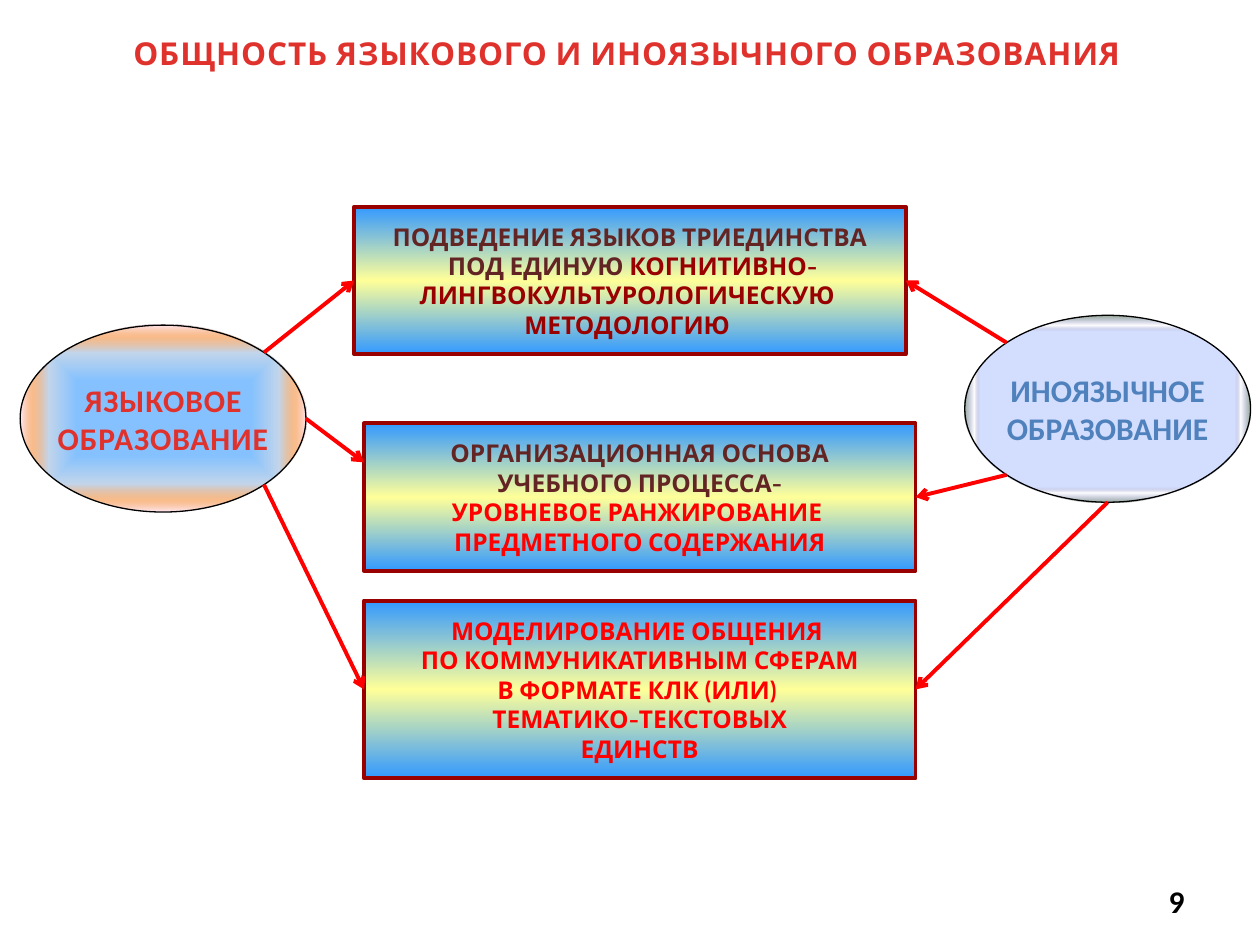
from math import cos, radians, sin

from lxml import etree
from pptx import Presentation
from pptx.dml.color import RGBColor
from pptx.enum import shapes, text
from pptx.oxml.ns import qn
from pptx.util import Pt

HUES = {"red": "FF0000", "wine": "990000", "brown": "632523", "blue": "4F81BD",
        "black": "000000"}
TITLE = [(25, "E0322D", 100), (100, "A2201C", 100)]
BAND = [(0, "3399FF", 100), (50, "FFFF99", 100), (100, "3399FF", 100)]
PEACH = [(40, "85C2FF", 100), (70, "C4D6EB", 100), (87, "F79646", 63), (100, "FFEBFA", 100)]
LILAC = [(53, "D4DEFF", 100), (83, "D4DEFF", 100), (89, "8488C4", 0), (100, "96AB94", 100)]
ALIGN = text.PP_ALIGN


def rgb(hue):
    return RGBColor.from_string(HUES[hue])


def sub(node, tag, **attrs):
    return etree.SubElement(node, qn(tag), {k: str(v) for k, v in attrs.items()})


class Slide:
    """Draws the parts of one slide in a shared style, with lengths in points."""

    def __init__(self, deck):
        self.page = deck.slides.add_slide(deck.slide_layouts[6])
        self.items = self.page.shapes

    def blend(self, fill, owner, stops, radial=False):
        fill.gradient()
        grad = next(owner.iter(qn("a:gradFill")))
        for child in list(grad):
            grad.remove(child)
        row = sub(grad, "a:gsLst")
        for pos, hue, alpha in stops:
            tone = sub(sub(row, "a:gs", pos=pos * 1000), "a:srgbClr", val=hue)
            if alpha < 100:
                sub(tone, "a:alpha", val=alpha * 1000)
        if radial:
            mid = dict.fromkeys("ltrb", 50000)
            sub(sub(grad, "a:path", path="shape"), "a:fillToRect", **mid)
        else:
            sub(grad, "a:lin", ang=5400000, scaled=0)

    def letter(self, shape, lines, size, font, align=ALIGN.CENTER, wrap=False, middle=True):
        frame = shape.text_frame
        frame.word_wrap = wrap
        anchor = text.MSO_ANCHOR
        frame.vertical_anchor = anchor.MIDDLE if middle else anchor.TOP
        for i, line in enumerate(lines):
            para = frame.add_paragraph() if i else frame.paragraphs[0]
            para.alignment = align
            for words, hue in line:
                run = para.add_run()
                run.text = words
                run.font.size, run.font.name, run.font.bold = Pt(size), font, True
                if hue == "title":
                    self.blend(run.font.fill, run._r, TITLE)
                    run._r.get_or_add_rPr().set("spc", "50")
                else:
                    run.font.color.rgb = rgb(hue)

    def label(self, box, words, hue, font, **style):
        shape = self.items.add_textbox(*map(Pt, box))
        self.letter(shape, [[(words, hue)]], 18, font, **style)

    def block(self, kind, box, stops, line, width, radial=False):
        shape = self.items.add_shape(kind, *map(Pt, box))
        shape.shadow.inherit = False
        self.blend(shape.fill, shape._element, stops, radial)
        shape.line.color.rgb = rgb(line)
        shape.line.width = Pt(width)
        return shape

    def oval(self, box, stops, words, hue):
        shape = self.block(shapes.MSO_SHAPE.OVAL, box, stops, "black", 0.75, True)
        self.letter(shape, [[(w, hue)] for w in words], 18, "Calibri")
        return shape

    def panel(self, box, lines):
        shape = self.block(shapes.MSO_SHAPE.RECTANGLE, box, BAND, "wine", 2.25)
        self.letter(shape, lines, 14, "Cabin")
        return shape

    def arrow(self, oval, angle, goal, side=None):
        turn = radians(angle)
        x = oval.left + oval.width / 2 * (1 + cos(turn))
        y = oval.top + oval.height / 2 * (1 + sin(turn))
        end = (0, 0) if side else map(Pt, goal)
        link = self.items.add_connector(shapes.MSO_CONNECTOR.STRAIGHT, int(x), int(y), *end)
        if side:
            link.end_connect(goal, side)
        link.line.color.rgb = rgb("red")
        link.line.width = Pt(2.25)
        trim = link._element.spPr
        sub(trim.find(qn("a:ln")), "a:tailEnd", type="arrow")
        sub(trim, "a:effectLst")


def main():
    deck = Presentation()
    deck.slide_width, deck.slide_height = Pt(720), Pt(540)
    slide = Slide(deck)
    slide.label((62, 16, 593, 29), "ОБЩНОСТЬ ЯЗЫКОВОГО И ИНОЯЗЫЧНОГО ОБРАЗОВАНИЯ",
                "title", "Cabin", middle=False)
    native = slide.oval((11.5, 185.8, 163.3, 106.8), PEACH,
                        ["ЯЗЫКОВОЕ", "ОБРАЗОВАНИЕ"], "title")
    other = slide.oval((551.3, 180.2, 163.3, 106.8), LILAC,
                       ["ИНОЯЗЫЧНОЕ", "ОБРАЗОВАНИЕ"], "blue")
    method = slide.panel((202.4, 118.2, 315.2, 84.2), [
        [("ПОДВЕДЕНИЕ ЯЗЫКОВ ТРИЕДИНСТВА", "brown")],
        [(" ПОД ЕДИНУЮ ", "brown"), ("КОГНИТИВНО-", "wine")],
        [("ЛИНГВОКУЛЬТУРОЛОГИЧЕСКУЮ ", "wine")],
        [("МЕТОДОЛОГИЮ ", "wine")]])
    levels = slide.panel((208, 242, 315.2, 84.2), [
        [("ОРГАНИЗАЦИОННАЯ ОСНОВА", "brown")],
        [("УЧЕБНОГО ПРОЦЕССА-", "brown")],
        [("УРОВНЕВОЕ РАНЖИРОВАНИЕ ", "red")],
        [("ПРЕДМЕТНОГО СОДЕРЖАНИЯ", "red")]])
    model = slide.panel((208, 343.2, 315.2, 101.5), [[(words, "red")] for words in (
        "МОДЕЛИРОВАНИЕ ОБЩЕНИЯ ", "ПО КОММУНИКАТИВНЫМ СФЕРАМ",
        "В ФОРМАТЕ КЛК (ИЛИ) ", "ТЕМАТИКО-ТЕКСТОВЫХ", "ЕДИНСТВ")])
    slide.arrow(native, -45, method, 1)
    slide.arrow(native, 0, (208, 264.2))
    slide.arrow(native, 45, model, 1)
    for angle, goal in ((-135, method), (135, levels), (90, model)):
        slide.arrow(other, angle, goal, 3)
    slide.label((516, 500.5, 168, 29), "9", "black", "Calibri",
                align=ALIGN.RIGHT, wrap=True)
    deck.save("out.pptx")


if __name__ == "__main__":
    main()
